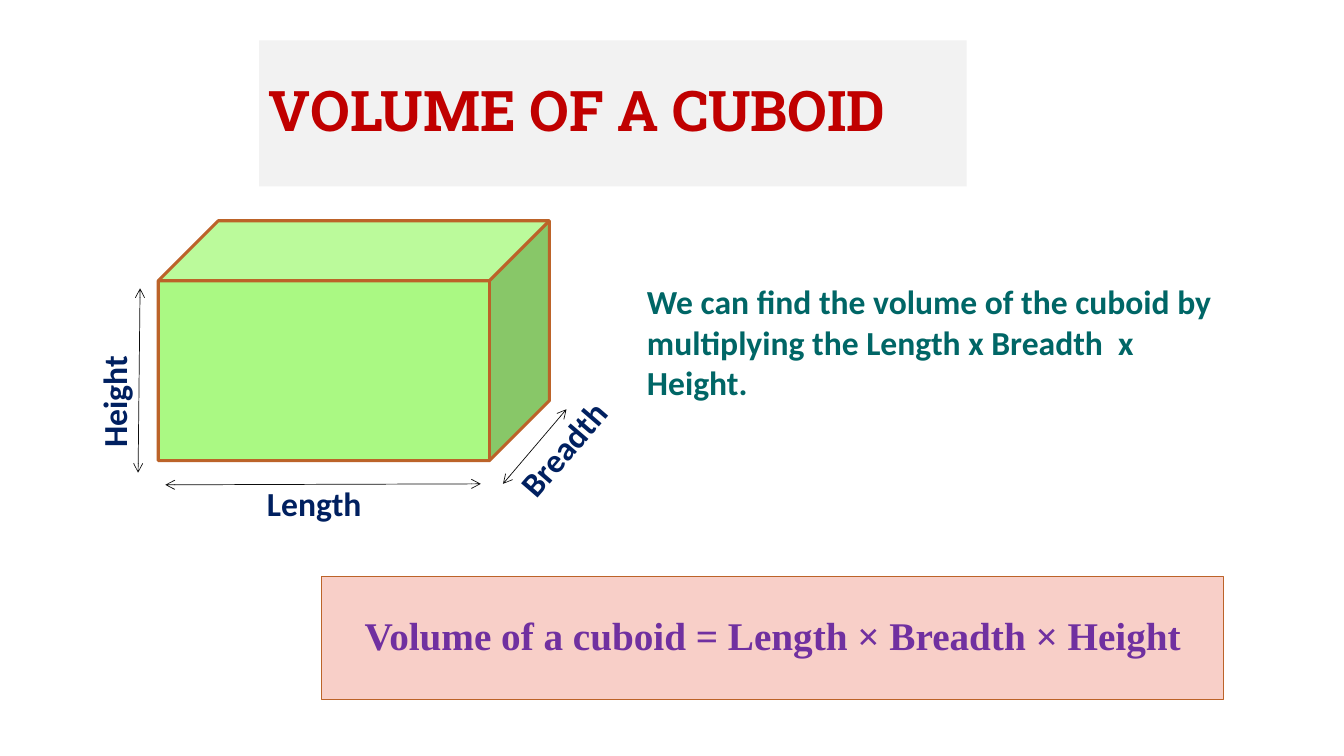
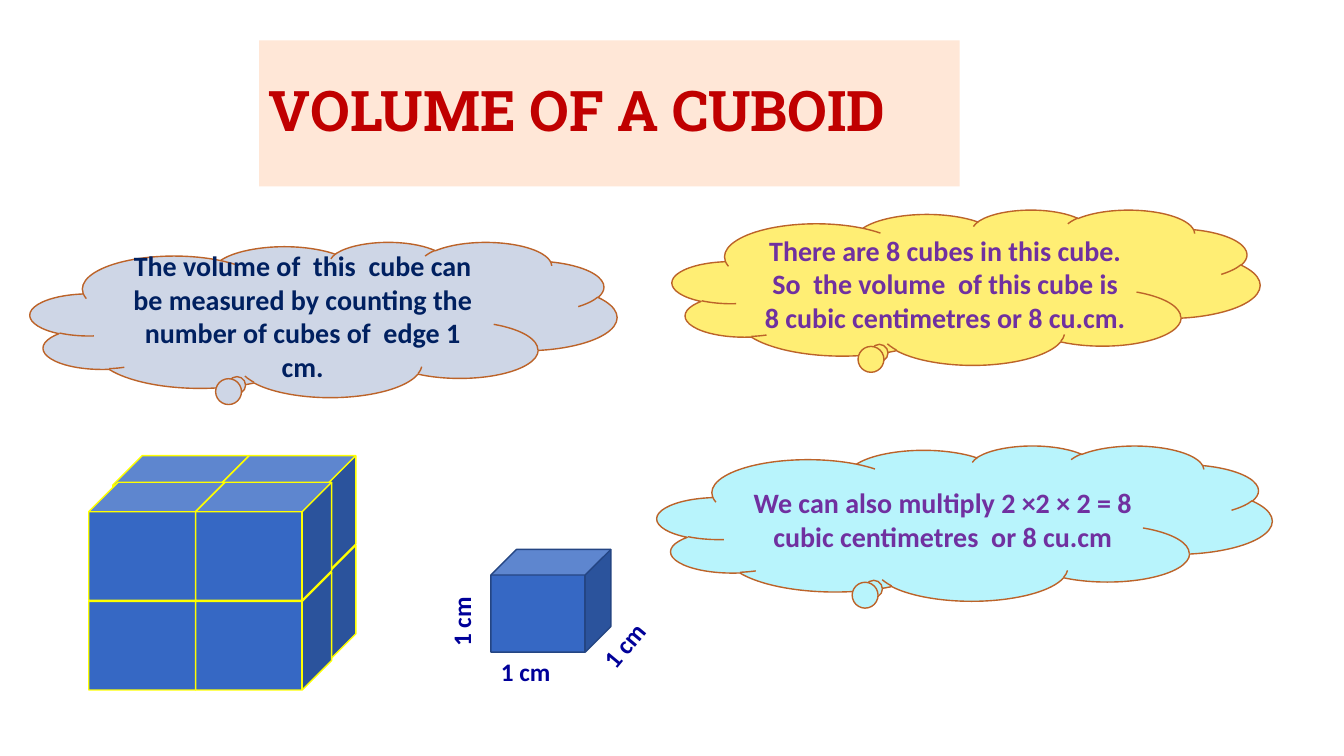
import itertools

import pptx
import pptx.dml.color
import pptx.enum.shapes
import pptx.enum.text
import pptx.oxml
import pptx.oxml.ns
import pptx.util

RGB = pptx.dml.color.RGBColor
SHAPE = pptx.enum.shapes.MSO_SHAPE
ANCHOR = pptx.enum.text.MSO_ANCHOR
ALIGN = pptx.enum.text.PP_ALIGN

# Colours
RED = RGB(0xC0, 0x00, 0x00)
GREY = RGB(0xF2, 0xF2, 0xF2)
PEACH = RGB(0xFF, 0xE7, 0xD7)
GREEN = RGB(0xAA, 0xF9, 0x83)
RUST = RGB(0xBC, 0x63, 0x29)
ROSE = RGB(0xF8, 0xCF, 0xC8)
PURPLE = RGB(0x70, 0x30, 0xA0)
NAVY = RGB(0x00, 0x20, 0x60)
INDIGO = RGB(0x00, 0x00, 0x99)
TEAL = RGB(0x00, 0x66, 0x66)
BLACK = RGB(0x0D, 0x0D, 0x0D)
CYAN = RGB(0xB8, 0xF4, 0xFC)
MIST = RGB(0xCE, 0xD6, 0xE6)
LEMON = RGB(0xFF, 0xEE, 0x74)
BLUE = RGB(0x36, 0x68, 0xC4)
DARK = RGB(0x24, 0x45, 0x83)
YELLOW = RGB(0xFF, 0xFF, 0x00)

# Grid: square cells, 75 rows high and 133.33 columns wide
CELL = pptx.util.Inches(0.1)


def grid(*cells):
    return [round(n * CELL) for n in cells]


class Deck:
    """Holds the shared style and the current slide."""

    sans = "Calibri"
    serif = "Times New Roman"
    slab = "Roboto Slab"

    def __init__(self):
        self.show = pptx.Presentation()
        self.show.slide_width, self.show.slide_height = grid(133.33, 75)

    def page(self, title, width, fill):
        """Starts a slide with its title band."""
        layout = self.show.slide_layouts[6]
        self.items = self.show.slides.add_slide(layout).shapes
        band = self.shape(SHAPE.RECTANGLE, (25.7, 4, width, 14.5), fill)
        self.letter(band, title, 40, RED, self.slab, ALIGN.LEFT, 0.9)

    def letter(self, item, text, size, color, face=sans,
               align=ALIGN.CENTER, space=None):
        frame = item.text_frame
        frame.word_wrap = True
        frame.text = text
        line = frame.paragraphs[0]
        line.alignment = align
        line.line_spacing = space
        line.font.name = face
        line.font.size = pptx.util.Pt(size)
        line.font.bold = True
        line.font.color.rgb = color

    def shape(self, kind, box, fill, edge=None, weight=1):
        item = self.items.add_shape(kind, *grid(*box))
        item.shadow.inherit = False
        item.fill.solid()
        item.fill.fore_color.rgb = fill
        if edge is None:
            item.line.fill.background()
        else:
            item.line.color.rgb = edge
            item.line.width = pptx.util.Pt(weight)
        item.text_frame.vertical_anchor = ANCHOR.MIDDLE
        return item

    def label(self, text, box, size, color, turn=0):
        item = self.items.add_textbox(*grid(*box))
        item.rotation = turn
        self.letter(item, text, size, color, align=ALIGN.LEFT)

    def cube(self, box, fill, edge, weight=1):
        self.shape(SHAPE.CUBE, box, fill, edge, weight)

    def cloud(self, text, box, fill, color):
        item = self.shape(SHAPE.CLOUD_CALLOUT, box, fill, RUST)
        item.adjustments[0] = -0.145
        item.adjustments[1] = 0.416
        self.letter(item, text, 20, color)

    def panel(self, text, box, fill, color):
        item = self.shape(SHAPE.RECTANGLE, box, fill, RUST)
        self.letter(item, text, 28, color, self.serif, space=0.9)

    def arrow(self, *ends):
        """Draws a thin line with an open head at both ends."""
        kind = pptx.enum.shapes.MSO_CONNECTOR.STRAIGHT
        item = self.items.add_connector(kind, *grid(*ends))
        item.line.color.rgb = BLACK
        item.line.width = pptx.util.Pt(0.5)
        props = item._element.spPr
        stroke = props.find(pptx.oxml.ns.qn("a:ln"))
        space = pptx.oxml.ns.nsdecls("a")
        for end in ("headEnd", "tailEnd"):
            stroke.append(pptx.oxml.parse_xml(f'<a:{end} {space} type="arrow"/>'))
        props.append(pptx.oxml.parse_xml(f"<a:effectLst {space}/>"))


def formula(deck):
    deck.page("VOLUME OF A CUBOID", 70.2, GREY)

    # Cuboid with its three measures
    deck.cube((15.7, 21.9, 38.8, 23.8), GREEN, RUST, 2.25)
    for text, box, turn in (
        ("Length", (25.5, 47.4, 14.2, 5), 0),
        ("Breadth", (48.8, 40.9, 16, 5), 310.8),
        ("Height", (5, 36.6, 12.6, 5), 270),
    ):
        deck.label(text, box, 24, NAVY, turn)
    deck.arrow(16.4, 48.1, 47.7, 48)
    deck.arrow(49.9, 48, 56.2, 40.6)
    deck.arrow(13.7, 46.9, 13.9, 28.6)

    # Rule in words and as a formula
    deck.label("We can find the volume of the cuboid by multiplying the "
               "Length x Breadth  x Height.", (63.2, 27.4, 59.9, 13.1), 24, TEAL)
    deck.panel("Volume of a cuboid = Length × Breadth × Height",
               (31.9, 57.2, 89.5, 12.2), ROSE, PURPLE)


def count(deck):
    deck.page("VOLUME OF A CUBOID", 69.5, PEACH)

    # Thoughts
    deck.cloud("We can also multiply 2 ×2 × 2 = 8 cubic centimetres  or 8 cu.cm",
               (65.2, 44.2, 61, 15.4), CYAN, PURPLE)
    deck.cloud("The volume of  this  cube can be measured by counting the "
               "number of cubes of  edge 1 cm.",
               (3, 24, 58.2, 15.4), MIST, NAVY)
    deck.cloud("There are 8 cubes in this cube. So  the volume  of this cube "
               "is 8 cubic centimetres or 8 cu.cm.",
               (66.7, 20.8, 58.3, 15.4), LEMON, PURPLE)

    # Unit cube
    deck.cube((48.7, 54.5, 11.9, 10.2), BLUE, DARK)
    for left, top, turn in ((48.7, 64.6, 0), (42.2, 59.6, 270), (58.4, 61.9, 309.8)):
        deck.label("1 cm", (left, top, 7.1, 4), 18, INDIGO, turn)

    # Stack of 2 × 2 × 2 cubes, bottom layer first and back row first
    for up, back, col in itertools.product((0, 1), (1, 0), (0, 1)):
        left = 8.8 + 10.6 * col + 2.4 * back
        top = 56.75 - 8.9 * up - 2.65 * back
        deck.cube((left, top, 13.5, 11.7), BLUE, YELLOW)


def main():
    deck = Deck()
    formula(deck)
    count(deck)
    deck.show.save("out.pptx")


if __name__ == "__main__":
    main()
